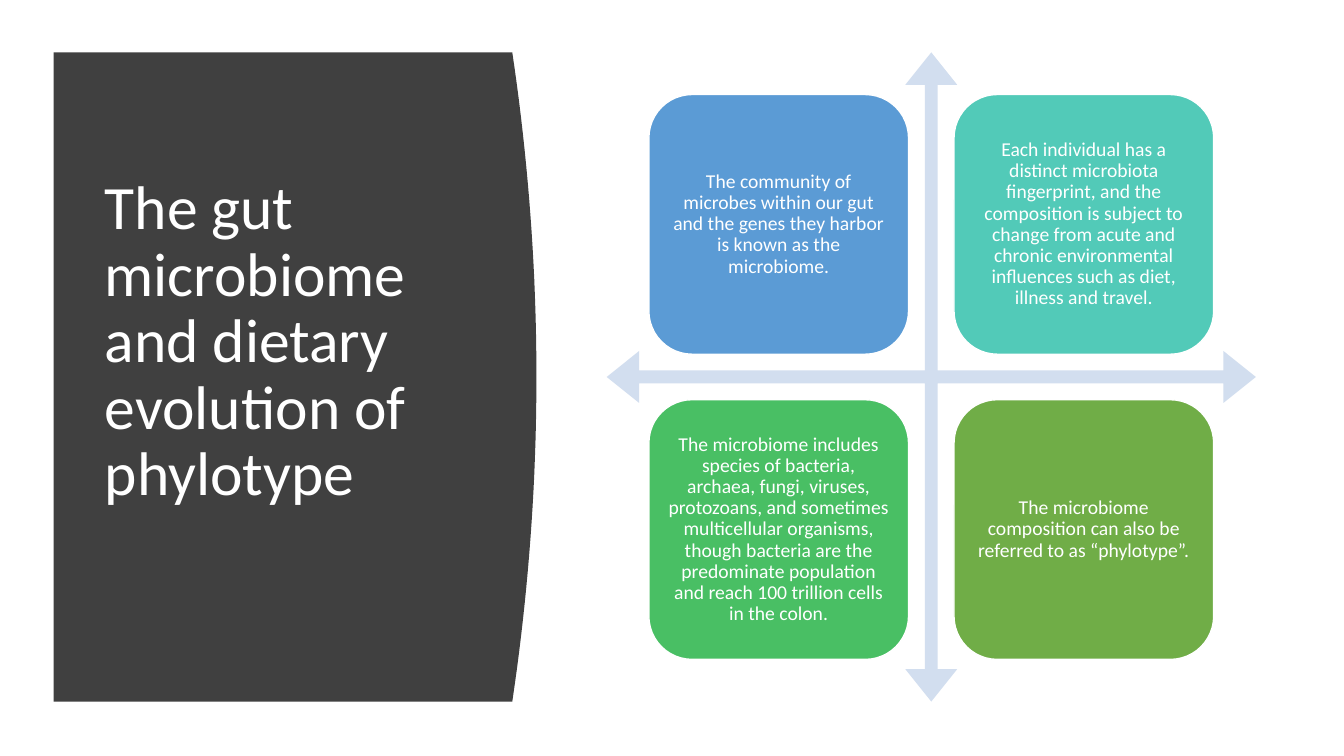
from pptx import Presentation
from pptx.dml.color import RGBColor
from pptx.enum.shapes import MSO_SHAPE
from pptx.enum.text import MSO_ANCHOR, PP_ALIGN
from pptx.util import Cm, Pt

COLORS = {
    "panel": "404040",
    "arrows": "D2DEEF",
    "white": "FFFFFF",
    "blue": "5B9BD5",
    "teal": "52CAB8",
    "green": "49BF64",
    "olive": "70AD47",
}

TITLE = "The gut microbiome and dietary evolution of phylotype"

FACTS = [
    ("blue", "The community of microbes within our gut and the genes they "
             "harbor is known as the microbiome."),
    ("teal", "Each individual has a distinct microbiota fingerprint, and the "
             "composition is subject to change from acute and chronic "
             "environmental influences such as diet, illness and travel."),
    ("green", "The microbiome includes species of bacteria, archaea, fungi, "
              "viruses, protozoans, and sometimes multicellular organisms, "
              "though bacteria are the predominate population and reach 100 "
              "trillion cells in the colon."),
    ("olive", "The microbiome composition can also be referred to as "
              "“phylotype”."),
]


def rgb(name):
    return RGBColor.from_string(COLORS[name])


def paint(shape, fill, line=None):
    shape.shadow.inherit = False
    shape.fill.solid()
    shape.fill.fore_color.rgb = rgb(fill)
    if line:
        shape.line.color.rgb = rgb(line)
        shape.line.width = Pt(1)
    else:
        shape.line.fill.background()


def write(shape, text, *, size, align, insets, color="white"):
    frame = shape.text_frame
    frame.word_wrap = True
    frame.vertical_anchor = MSO_ANCHOR.MIDDLE
    (frame.margin_left, frame.margin_top,
     frame.margin_right, frame.margin_bottom) = [Cm(inset) for inset in insets]
    paragraph = frame.paragraphs[0]
    paragraph.alignment = align
    paragraph.line_spacing = 0.9
    run = paragraph.add_run()
    run.text = text
    run.font.name = "Calibri"
    run.font.size = Pt(size)
    run.font.color.rgb = rgb(color)


def add_title_panel(slide, left, top, width, height):
    bulge = 0.05 * width
    steps = 40
    curve = []
    for step in range(steps + 1):
        offset = 2 * step / steps - 1
        curve.append((Cm(left + width - bulge * offset ** 2),
                      Cm(top + height * step / steps)))
    outline = slide.shapes.build_freeform(Cm(left), Cm(top))
    outline.add_line_segments(curve + [(Cm(left), Cm(top + height))], close=True)
    paint(outline.convert_to_shape(), "panel")

    title = slide.shapes.add_textbox(Cm(left + 1.04), Cm(top + 1.5),
                                     Cm(9.5), Cm(height - 3.05))
    write(title, TITLE, size=44, align=PP_ALIGN.LEFT,
          insets=(0.25, 0.13, 0.25, 1.81))


def add_fact_matrix(slide, left, top, side):
    arrows = slide.shapes.add_shape(MSO_SHAPE.QUAD_ARROW, Cm(left), Cm(top),
                                    Cm(side), Cm(side))
    for index, ratio in enumerate((0.02, 0.04, 0.05)):
        arrows.adjustments[index] = ratio
    paint(arrows, "arrows")

    tile_side = 0.4 * side
    margin = 0.065 * side
    pitch = 0.47 * side
    for index, (color, fact) in enumerate(FACTS):
        row, column = divmod(index, 2)
        tile = slide.shapes.add_shape(
            MSO_SHAPE.ROUNDED_RECTANGLE,
            Cm(left + margin + column * pitch), Cm(top + margin + row * pitch),
            Cm(tile_side), Cm(tile_side))
        paint(tile, color, line="white")
        write(tile, fact, size=14, align=PP_ALIGN.CENTER, insets=(0.15,) * 4)


def main():
    deck = Presentation()
    deck.slide_width, deck.slide_height = Cm(33.87), Cm(19.05)
    slide = deck.slides.add_slide(deck.slide_layouts[6])
    add_title_panel(slide, 1.35, 1.32, 12.17, 16.36)
    add_fact_matrix(slide, 15.29, 1.32, 16.36)
    deck.save("out.pptx")


if __name__ == "__main__":
    main()
